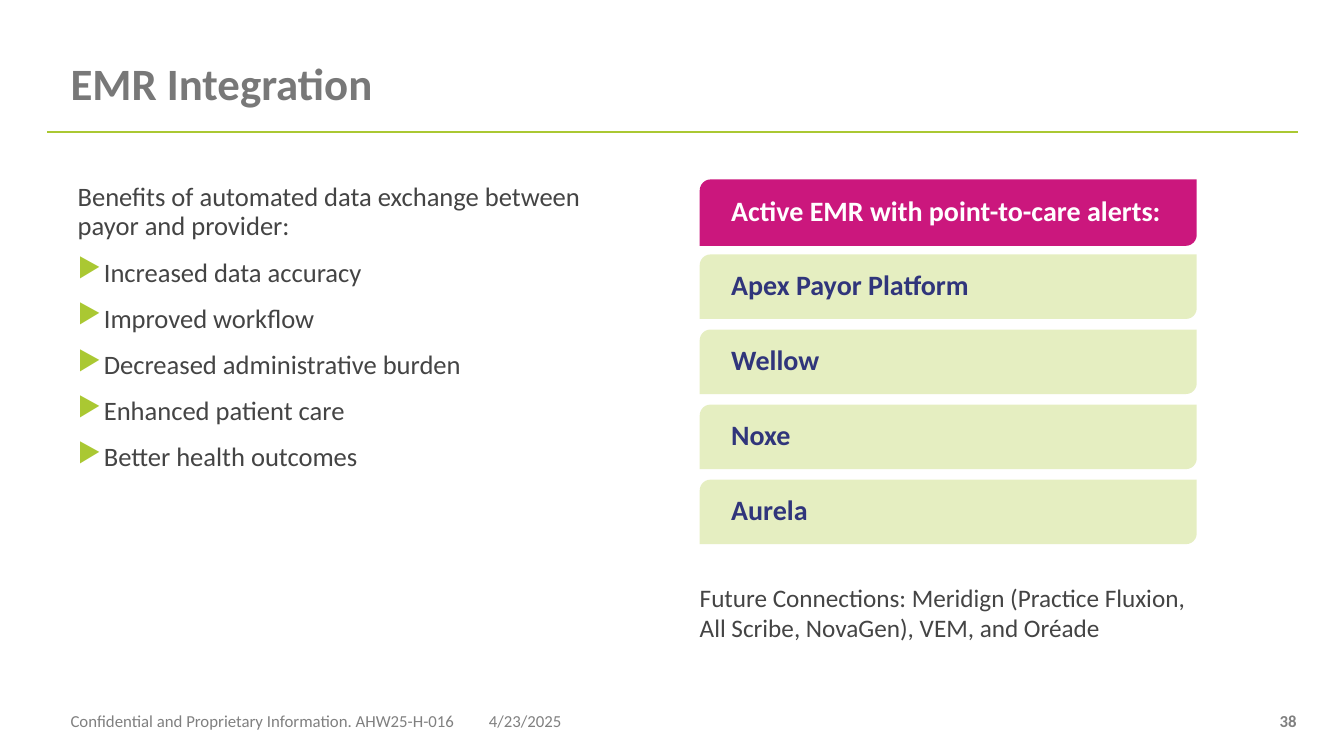
from lxml import etree
from pptx import Presentation
from pptx.dml.color import RGBColor
from pptx.enum.shapes import MSO_CONNECTOR as Connector, MSO_SHAPE as Preset
from pptx.enum.text import MSO_ANCHOR as Anchor, PP_ALIGN as Align
from pptx.oxml.ns import qn
from pptx.util import Inches, Pt

WIDTH, HEIGHT = Inches(13.33), Inches(7.5)
FONT = "Calibri"
LIME, MAGENTA, NAVY, WHITE = "AAC832", "CB177D", "30357B", "FFFFFF"
TITLE_GREY, BODY_GREY, FOOTER_GREY = "787878", "444444", "808080"

BENEFITS = [
    "Increased data accuracy",
    "Improved workflow",
    "Decreased administrative burden",
    "Enhanced patient care",
    "Better health outcomes",
]
CARDS = [
    "Active EMR with point-to-care alerts:",
    "Apex Payor Platform",
    "Wellow",
    "Noxe",
    "Aurela",
]
CARD_LEFT, CARD_TOP, CARD_WIDTH = 52.06, 23.73, 36.98
CARD_HEIGHT, CARD_PITCH = 8.53, 9.93
FOOTER_TOP, FOOTER_HEIGHT = 92.67, 5.33


def across(percent):
    return round(WIDTH * percent / 100)


def down(percent):
    return round(HEIGHT * percent / 100)


def place(left, top, width, height):
    """Turn percentages of the slide into a position and size."""
    return across(left), down(top), across(width), down(height)


def color(value):
    return RGBColor.from_string(value)


def add_bullet(paragraph):
    properties = paragraph._p.get_or_add_pPr()
    properties.set("marL", str(Inches(0.26)))
    properties.set("indent", str(-Inches(0.26)))
    bullet_color = etree.SubElement(properties, qn("a:buClr"))
    etree.SubElement(bullet_color, qn("a:srgbClr"), val=LIME)
    etree.SubElement(properties, qn("a:buChar"), char="▶")


def write(frame, text, size, ink, bold=False, align=Align.LEFT,
          spacing=None, after=0, bullet=False):
    """Fill the empty first paragraph, or append a new one."""
    paragraph = frame.paragraphs[0]
    if paragraph.runs:
        paragraph = frame.add_paragraph()
    if bullet:
        add_bullet(paragraph)
    paragraph.alignment = align
    paragraph.line_spacing = spacing
    paragraph.space_after = Pt(after)
    run = paragraph.add_run()
    run.text = text
    run.font.name = FONT
    run.font.size = Pt(size)
    run.font.bold = bold
    run.font.color.rgb = color(ink)


def set_frame(frame, anchor, left_inset):
    frame.word_wrap = True
    frame.vertical_anchor = anchor
    frame.margin_left, frame.margin_right = Inches(left_inset), Inches(0.1)
    frame.margin_top = frame.margin_bottom = Inches(0.05)


def add_text_box(slide, box, anchor=Anchor.TOP):
    frame = slide.shapes.add_textbox(*place(*box)).text_frame
    set_frame(frame, anchor, 0)
    return frame


def add_rule(slide, left, right, top):
    rule = slide.shapes.add_connector(
        Connector.STRAIGHT, across(left), down(top), across(right), down(top))
    rule.line.color.rgb = color(LIME)
    rule.line.width = Pt(1)
    etree.SubElement(rule._element.spPr, qn("a:effectLst"))


def add_card(slide, row, text):
    """Draw one card of the column; the first is the heading."""
    heading = row == 0
    height = 8.8 if heading else CARD_HEIGHT
    box = place(CARD_LEFT, CARD_TOP + row * CARD_PITCH, CARD_WIDTH, height)
    card = slide.shapes.add_shape(Preset.ROUND_2_DIAG_RECTANGLE, *box)
    card.shadow.inherit = False
    card.line.fill.background()
    card.fill.solid()
    card.fill.fore_color.rgb = color(MAGENTA if heading else LIME)
    if not heading:
        fill_color = card._element.spPr.find(qn("a:solidFill"))[0]
        etree.SubElement(fill_color, qn("a:alpha"), val="30000")
    set_frame(card.text_frame, Anchor.MIDDLE, 0.28)
    write(card.text_frame, text, 20, WHITE if heading else NAVY,
          bold=True, spacing=0.9)


def add_footer(slide, left, width, text, **style):
    frame = add_text_box(
        slide, (left, FOOTER_TOP, width, FOOTER_HEIGHT), Anchor.MIDDLE)
    write(frame, text, 12, FOOTER_GREY, **style)


def main():
    presentation = Presentation()
    presentation.slide_width, presentation.slide_height = WIDTH, HEIGHT
    slide = presentation.slides.add_slide(presentation.slide_layouts[6])

    add_rule(slide, 3.53, 96.55, 17.47)
    title = add_text_box(slide, (5.25, 7.47, 50.56, 10))
    write(title, "EMR Integration", 32, TITLE_GREY, bold=True, spacing=0.9)

    body_style = {"ink": BODY_GREY, "spacing": Pt(21), "after": 12}
    benefits = add_text_box(slide, (5.78, 23.47, 42.24, 63.47))
    write(benefits, "Benefits of automated data exchange between payor and "
          "provider:", 19, **body_style)
    for benefit in BENEFITS:
        write(benefits, benefit, 19, bullet=True, **body_style)

    for row, text in enumerate(CARDS):
        add_card(slide, row, text)
    future = add_text_box(slide, (CARD_LEFT, 76.53, CARD_WIDTH, 10.53))
    write(future, "Future Connections: Meridign (Practice Fluxion, "
          "All Scribe, NovaGen), VEM, and Oréade", 18, **body_style)

    add_footer(slide, 5.25, 33.76,
               "Confidential and Proprietary Information. AHW25-H-016")
    add_footer(slide, 36.38, 22.5, "4/23/2025")
    add_footer(slide, 74.72, 22.5, "38", bold=True, align=Align.RIGHT)
    presentation.save("out.pptx")


if __name__ == "__main__":
    main()
